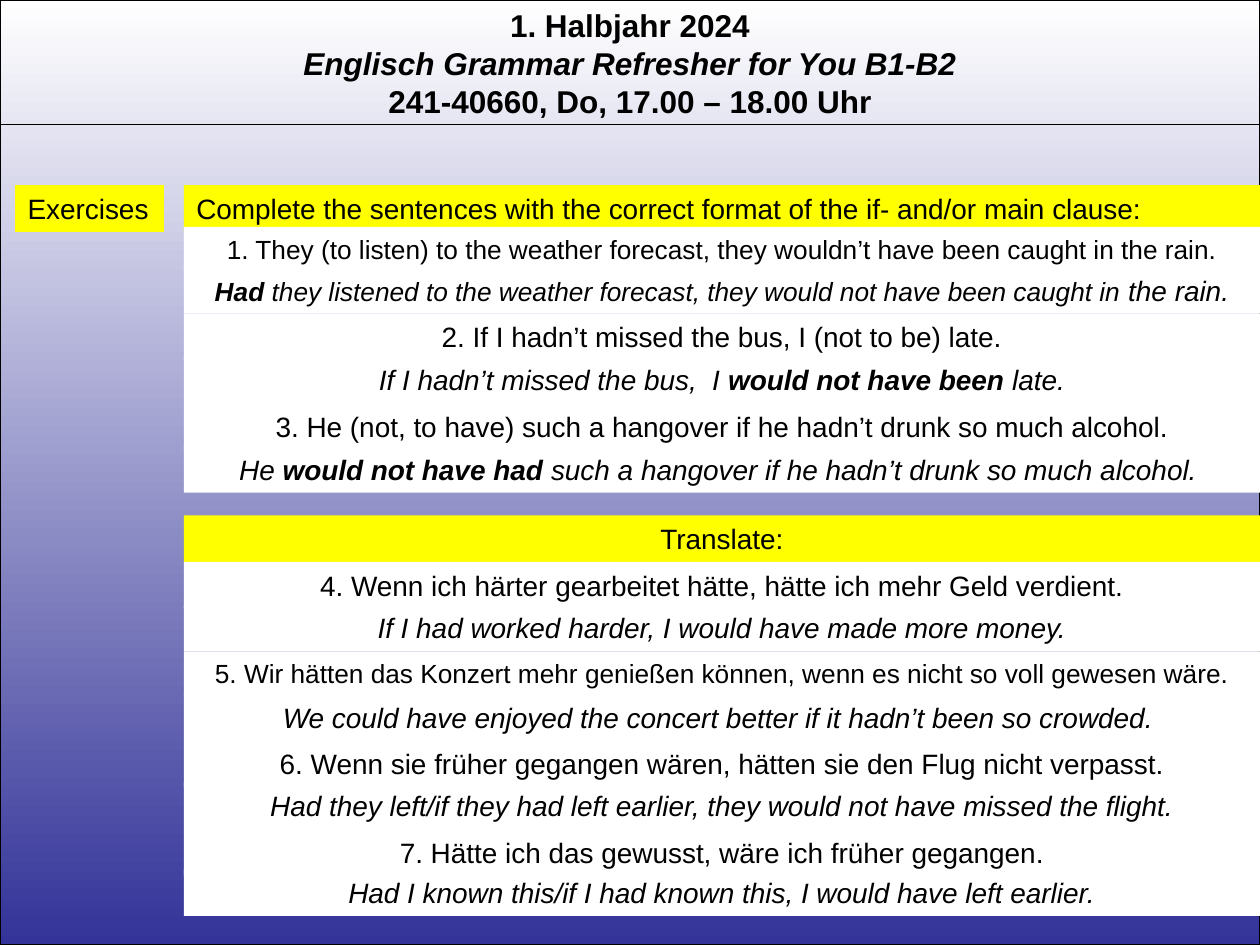
from dataclasses import dataclass

from pptx import Presentation
from pptx.dml.color import RGBColor
from pptx.enum.shapes import MSO_CONNECTOR as Connector, MSO_SHAPE as Preset
from pptx.enum.text import MSO_ANCHOR as Anchor, MSO_AUTO_SIZE as AutoSize, PP_ALIGN as Align
from pptx.oxml.ns import qn
from pptx.util import Inches, Pt

FONT, BLACK, WHITE, YELLOW, BLUE = "Arial", "000000", "FFFFFF", "FFFF00", "333399"
PAGE_WIDTH, PAGE_HEIGHT = 10, 7.5
COLUMN_LEFT = 1.46
COLUMN_WIDTH = PAGE_WIDTH - COLUMN_LEFT


@dataclass
class Span:
    text: str
    size: float = 16
    bold: bool = False
    italic: bool = False


@dataclass
class Row:
    top: float
    spans: list[Span]
    fill: str = WHITE
    left: float = COLUMN_LEFT
    width: float = COLUMN_WIDTH
    height: float = 0.37
    align: Align = Align.CENTER


def color(code: str) -> RGBColor:
    return RGBColor.from_string(code)


def answer(*texts: str, size: float = 16) -> list[Span]:
    """Italic solution; every second text is the bold verb form."""
    return [Span(text, size, bold=index % 2 == 1, italic=True)
            for index, text in enumerate(texts)]


def write(frame, lines: list[list[Span]], align: Align) -> None:
    frame.word_wrap = True
    frame.auto_size = AutoSize.SHAPE_TO_FIT_TEXT
    frame.vertical_anchor = Anchor.TOP
    for index, spans in enumerate(lines):
        para = frame.add_paragraph() if index else frame.paragraphs[0]
        para.alignment = align
        for span in spans:
            run = para.add_run()
            run.text = span.text
            formats = {"name": FONT, "size": Pt(span.size),
                       "bold": span.bold, "italic": span.italic}
            for name, value in formats.items():
                setattr(run.font, name, value)
            run.font.color.rgb = color(BLACK)


def add_box(page, left: float, top: float, width: float, height: float):
    box = page.shapes.add_shape(Preset.RECTANGLE, Inches(left), Inches(top),
                                Inches(width), Inches(height))
    box.shadow.inherit = False
    return box


def add_row(page, row: Row) -> None:
    box = add_box(page, row.left, row.top, row.width, row.height)
    box.fill.solid()
    box.fill.fore_color.rgb = color(row.fill)
    box.line.fill.background()
    write(box.text_frame, [row.spans], row.align)


def add_backdrop(page) -> None:
    box = add_box(page, 0, 0, PAGE_WIDTH, PAGE_HEIGHT)
    box.fill.gradient()
    box.fill.gradient_angle = 270
    for stop, position, code in zip(box.fill.gradient_stops, (0, 1), (WHITE, BLUE)):
        stop.position = position
        stop.color.rgb = color(code)
    box.line.color.rgb = color(BLACK)
    box.line.width = Pt(0.75)


def add_header(page) -> None:
    box = page.shapes.add_textbox(0, 0, Inches(PAGE_WIDTH), Inches(1.01))
    write(box.text_frame, [
        [Span("1. Halbjahr 2024", 18, bold=True)],
        [Span("Englisch Grammar Refresher for You B1-B2", 18, bold=True, italic=True)],
        [Span("241-40660, Do, 17.00 – 18.00 Uhr", 18, bold=True)],
    ], Align.CENTER)
    rule = page.shapes.add_connector(Connector.STRAIGHT, 0, Inches(0.99),
                                     Inches(PAGE_WIDTH), Inches(0.99))
    rule.line.color.rgb = color(BLACK)
    rule.line.width = Pt(0.75)
    properties = rule._element.spPr
    properties.append(properties.makeelement(qn("a:effectLst"), {}))


ROWS = [
    # Label and first task
    Row(1.47, [Span("Exercises")], YELLOW, left=0.12, width=1.18, align=Align.LEFT),
    Row(1.47, [Span("Complete the sentences with the correct format of the "
                    "if- and/or main clause:")], YELLOW, align=Align.LEFT),
    Row(1.8, [Span("1. They (to listen) to the weather forecast, they wouldn’t have "
                   "been caught in the rain.", 15)], height=0.35),
    Row(2.12, [Span("Had ", 15, bold=True, italic=True),
               *answer("they listened to the weather forecast, they would not have "
                       "been caught in ", size=15),
               *answer("the rain.")]),
    Row(2.49, [Span("2. If I hadn’t missed the bus, I (not to be) late.")]),
    Row(2.83, answer("If I hadn’t missed the bus,  I ", "would not have been ", "late.")),
    Row(3.2, [Span("3. He (not, to have) such a hangover if he hadn’t drunk so much alcohol.")]),
    Row(3.54, answer("He ", "would not have had ",
                     "such a hangover if he hadn’t drunk so much alcohol. ")),
    # Translation task
    Row(4.09, [Span("Translate:")], YELLOW),
    Row(4.46, [Span("4. Wenn ich härter gearbeitet hätte, hätte ich mehr Geld verdient.")]),
    Row(4.8, answer("If I had worked harder, I would have made more money.")),
    Row(5.17, [Span("5. Wir hätten das Konzert mehr genießen können, wenn es nicht so "
                    "voll gewesen wäre.", 15)], height=0.35),
    Row(5.51, answer("We could have enjoyed the concert better if it hadn’t been so crowded. ")),
    Row(5.88, [Span("6. Wenn sie früher gegangen wären, hätten sie den Flug nicht verpasst.")]),
    Row(6.21, answer("Had they left/if they had left earlier, they would not have "
                     "missed the flight.")),
    Row(6.58, [Span("7. Hätte ich das gewusst, wäre ich früher gegangen.")]),
    Row(6.9, answer("Had I known this/if I had known this, I would have left earlier.")),
]


def main() -> None:
    deck = Presentation()
    deck.slide_width, deck.slide_height = Inches(PAGE_WIDTH), Inches(PAGE_HEIGHT)
    page = deck.slides.add_slide(deck.slide_layouts[6])
    add_backdrop(page)
    add_header(page)
    for row in ROWS:
        add_row(page, row)
    deck.save("out.pptx")


if __name__ == "__main__":
    main()
